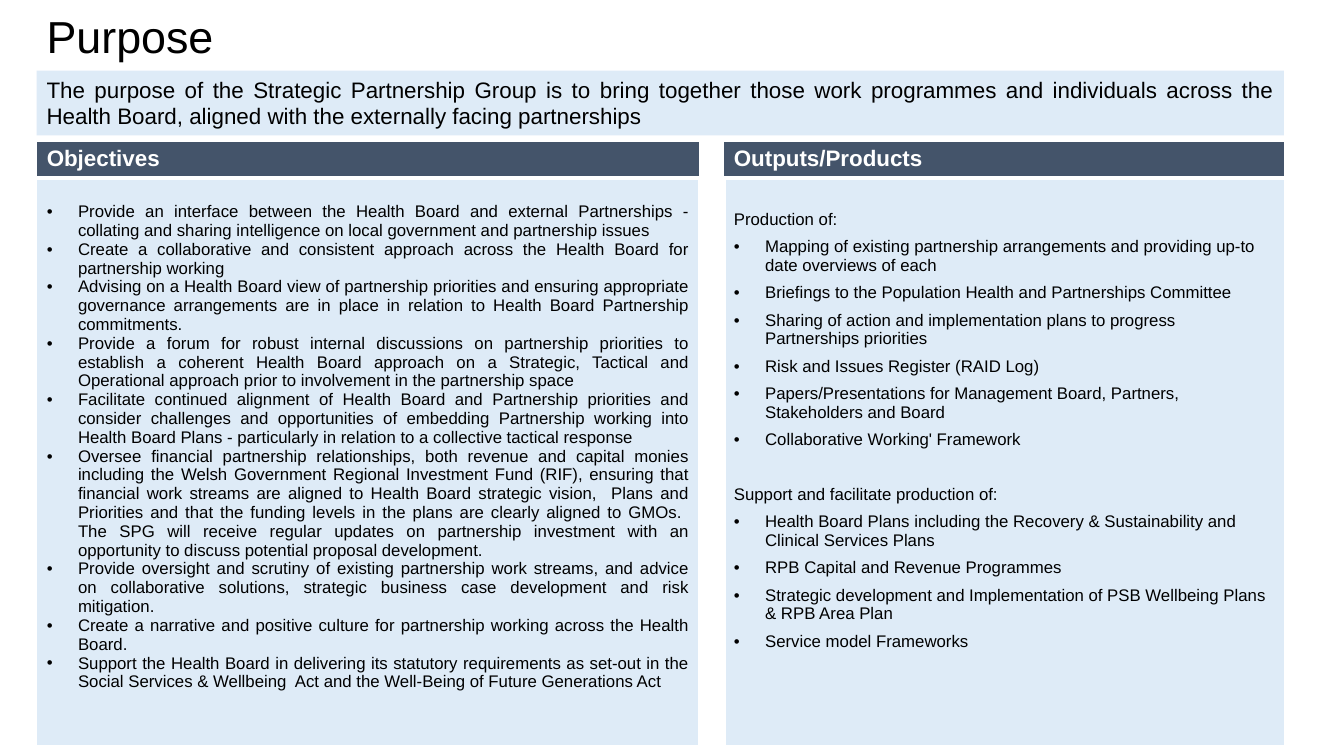
from dataclasses import dataclass

from lxml import etree
from pptx import Presentation, util as u
from pptx.dml.color import RGBColor
from pptx.enum import shapes, text
from pptx.oxml import ns


@dataclass(frozen=True)
class Theme:
    """Colours, font and type sizes of the slide."""
    ink: str = "000000"
    paper: str = "FFFFFF"
    band: str = "44546A"
    panel: str = "DEEBF7"
    font: str = "Arial"
    title: int = 32
    lead: int = 16
    body: int = 12
    rule: int = 3


class PurposePage:
    """Draws elements on a page divided into 100 columns and 100 rows."""

    def __init__(self, deck, theme):
        self.deck, self.theme = deck, theme
        self.page = deck.slides.add_slide(deck.slide_layouts[6])

    def across(self, columns):
        return round(self.deck.slide_width * columns / 100)

    def down(self, rows):
        return round(self.deck.slide_height * rows / 100)

    def place(self, left, top, width, height):
        return self.across(left), self.down(top), self.across(width), self.down(height)

    def letter(self, para, words, size, colour, bold=False):
        para.text = words
        para.font.name = self.theme.font
        para.font.size = u.Pt(size)
        para.font.bold = bold
        para.font.color.rgb = RGBColor.from_string(colour)

    def paint(self, item, colour):
        item.fill.solid()
        item.fill.fore_color.rgb = RGBColor.from_string(colour)

    def title(self, words, *area):
        frame = self.page.shapes.add_textbox(*self.place(*area)).text_frame
        frame.word_wrap = True
        frame.vertical_anchor = text.MSO_ANCHOR.MIDDLE
        para = frame.paragraphs[0]
        para.line_spacing = 0.9
        self.letter(para, words, self.theme.title, self.theme.ink)

    def banner(self, words, *area):
        box = self.page.shapes.add_shape(shapes.MSO_SHAPE.RECTANGLE, *self.place(*area))
        box.shadow.inherit = False
        box.line.fill.background()
        self.paint(box, self.theme.panel)
        box.text_frame.word_wrap = True
        box.text_frame.vertical_anchor = text.MSO_ANCHOR.TOP
        para = box.text_frame.paragraphs[0]
        para.alignment = text.PP_ALIGN.JUSTIFY
        self.letter(para, words, self.theme.lead, self.theme.ink)

    def table(self, left, top, widths, heights):
        area = self.place(left, top, sum(widths), sum(heights))
        table = self.page.shapes.add_table(len(heights), len(widths), *area).table
        table.first_row = table.horz_banding = False
        for column, width in zip(table.columns, widths):
            column.width = self.across(width)
        for row, height in zip(table.rows, heights):
            row.height = self.down(height)
        return table

    def border(self, cell, sides):
        for side in sides:
            line = etree.SubElement(cell._tc.get_or_add_tcPr(), ns.qn(f"a:ln{side}"),
                                    w=str(u.Pt(self.theme.rule)))
            fill = etree.SubElement(line, ns.qn("a:solidFill"))
            etree.SubElement(fill, ns.qn("a:srgbClr"), val=self.theme.paper)

    def heading(self, cell, words):
        self.border(cell, "B")
        self.paint(cell, self.theme.band)
        self.letter(cell.text_frame.paragraphs[0], words, self.theme.lead, self.theme.paper, True)

    def bullet(self, para):
        props = para._p.get_or_add_pPr()
        props.set("marL", str(u.Inches(0.31)))
        props.set("indent", str(-u.Inches(0.31)))
        etree.SubElement(props, ns.qn("a:buFont"), typeface=self.theme.font)
        etree.SubElement(props, ns.qn("a:buChar"), char="•")

    def panel(self, cell, groups, sides, inset, align, after):
        self.border(cell, sides)
        self.paint(cell, self.theme.panel)
        cell.margin_top = u.Inches(inset)
        frame = cell.text_frame
        lines = [(words, kind, kind == 0 and number > 0)
                 for number, (intro, points) in enumerate(groups)
                 for kind, words in enumerate([intro, *points]) if words]
        for number, (words, kind, gap) in enumerate(lines):
            para = frame.add_paragraph() if number else frame.paragraphs[0]
            if kind:
                self.bullet(para)
            para.alignment = align
            para.space_after = u.Pt(after)
            if gap:
                para.space_before = u.Pt(20)
            self.letter(para, words, self.theme.body, self.theme.ink)


PURPOSE = ("The purpose of the Strategic Partnership Group is to bring together those work programmes "
           "and individuals across the Health Board, aligned with the externally facing partnerships")

OBJECTIVES = [("", [
    "Provide an interface between the Health Board and external Partnerships - collating and sharing "
    "intelligence on local government and partnership issues",
    "Create a collaborative and consistent approach across the Health Board for partnership working",
    "Advising on a Health Board view of partnership priorities and ensuring appropriate governance "
    "arrangements are in place in relation to Health Board Partnership commitments.",
    "Provide a forum for robust internal discussions on partnership priorities to establish a coherent "
    "Health Board approach on a Strategic, Tactical and Operational approach prior to involvement "
    "in the partnership space",
    "Facilitate continued alignment of Health Board and Partnership priorities and consider challenges "
    "and opportunities of embedding Partnership working into Health Board Plans - particularly in "
    "relation to a collective tactical response",
    "Oversee financial partnership relationships, both revenue and capital monies including the Welsh "
    "Government Regional Investment Fund (RIF), ensuring that financial work streams are aligned to "
    "Health Board strategic vision,  Plans and Priorities and that the funding levels in the plans are "
    "clearly aligned to GMOs.  The SPG will receive regular updates on partnership investment with an "
    "opportunity to discuss potential proposal development.",
    "Provide oversight and scrutiny of existing partnership work streams, and advice on collaborative "
    "solutions, strategic business case development and risk mitigation.",
    "Create a narrative and positive culture for partnership working across the Health Board.",
    "Support the Health Board in delivering its statutory requirements as set-out in the Social "
    "Services & Wellbeing  Act and the Well-Being of Future Generations Act",
])]

OUTPUTS = [
    ("Production of:", [
        "Mapping of existing partnership arrangements and providing up-to date overviews of each",
        "Briefings to the Population Health and Partnerships Committee",
        "Sharing of action and implementation plans to progress Partnerships priorities",
        "Risk and Issues Register (RAID Log)",
        "Papers/Presentations for Management Board, Partners, Stakeholders and Board",
        "Collaborative Working' Framework",
    ]),
    ("Support and facilitate production of:", [
        "Health Board Plans including the Recovery & Sustainability and Clinical Services Plans",
        "RPB Capital and Revenue Programmes",
        "Strategic development and Implementation of PSB Wellbeing Plans & RPB Area Plan",
        "Service model Frameworks",
    ]),
]


def main():
    """Build the purpose slide and save the deck."""
    deck = Presentation()
    deck.slide_width, deck.slide_height = u.Inches(13.33), u.Inches(7.5)
    page = PurposePage(deck, Theme())
    page.title("Purpose", 2.73, 0.3, 86.3, 9.6)
    page.banner(PURPOSE, 2.73, 9.35, 92.8, 8.55)
    table = page.table(2.73, 18.67, [49.33, 1.73, 41.75], [4.8, 75.1])
    gutter = table.cell(0, 1)
    gutter.merge(table.cell(1, 1))
    gutter.fill.background()
    page.heading(table.cell(0, 0), "Objectives")
    page.heading(table.cell(0, 2), "Outputs/Products")
    page.panel(table.cell(1, 0), OBJECTIVES, "RT", 0.24, text.PP_ALIGN.JUSTIFY, 0)
    page.panel(table.cell(1, 2), OUTPUTS, "LT", 0.32, text.PP_ALIGN.LEFT, 6)
    deck.save("out.pptx")


if __name__ == "__main__":
    main()
